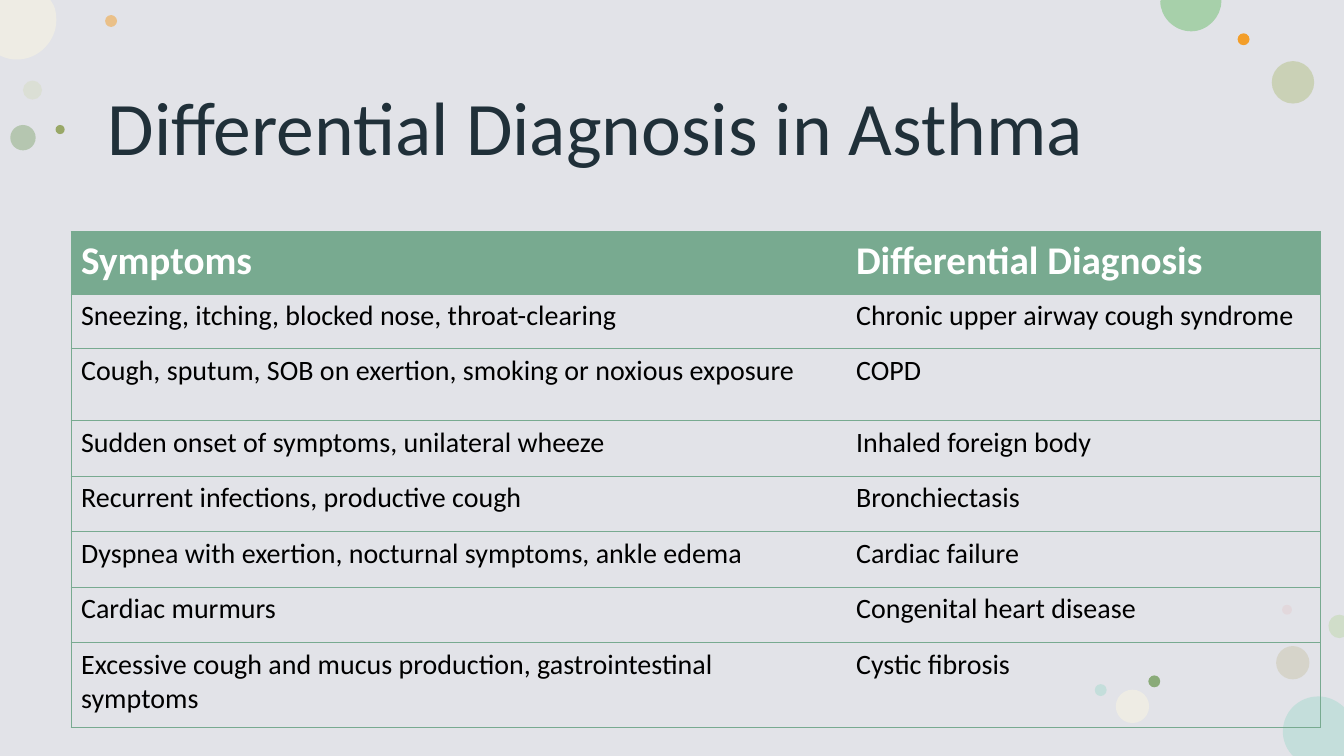
from lxml.etree import SubElement
from pptx import Presentation
from pptx.dml.color import RGBColor
from pptx.enum.shapes import MSO_SHAPE
from pptx.enum.text import MSO_ANCHOR
from pptx.oxml.ns import qn
from pptx.util import Cm, Pt

THEME = {
    "background": "E2E3E8",
    "border": "78AA90",
    "border_width": Pt(0.5),
    "title": {"size": Pt(54), "color": "203039", "bold": False},
    "header": {"size": Pt(28), "color": "FFFFFF", "bold": True},
    "body": {"size": Pt(20), "color": "000000", "bold": False},
    "font": "Calibri",
}
SLIDE_WIDTH, SLIDE_HEIGHT = Cm(33.87), Cm(19.05)

TITLE = "Differential Diagnosis in Asthma"
ROWS = [
    ("Symptoms", "Differential Diagnosis"),
    ("Sneezing, itching, blocked nose, throat-clearing", "Chronic upper airway cough syndrome"),
    ("Cough, sputum, SOB on exertion, smoking or noxious exposure", "COPD"),
    ("Sudden onset of symptoms, unilateral wheeze", "Inhaled foreign body"),
    ("Recurrent infections, productive cough", "Bronchiectasis"),
    ("Dyspnea with exertion, nocturnal symptoms, ankle edema", "Cardiac failure"),
    ("Cardiac murmurs", "Congenital heart disease"),
    ("Excessive cough and mucus production, gastrointestinal symptoms", "Cystic fibrosis"),
]
COLUMN_WIDTHS = [19.53, 11.96]
ROW_HEIGHTS = [1.57, 1.37, 1.82, 1.4, 1.4, 1.4, 1.4, 2.14]

DOTS = [
    (0.58, 2.03, 0.48, "D6DCC3", 50),
    (2.65, 0.38, 0.3, "F39E29", 50),
    (32.16, 16.28, 0.84, "CCC7AE", 50),
    (0.26, 3.15, 0.64, "8AAB79", 50),
    (32.05, 1.54, 1.07, "C2CBA4", 72),
    (31.19, 0.84, 0.3, "F39E29", 100),
    (32.31, 15.24, 0.25, "E3BEBE", 28),
    (28.94, 17.02, 0.3, "8AAB79", 100),
    (28.12, 17.38, 0.84, "EEECE4", 100),
    (27.59, 17.24, 0.3, "C4DEDB", 100),
    (1.4, 3.15, 0.23, "99A868", 100),
]
EDGE_DOTS = [
    ("C4DEDB", [
        (33.22, 17.55), (33.48, 17.55, 33.68, 17.65, 33.86, 17.81), (33.87, 17.83),
        (33.87, 19.05), (32.59, 19.05), (32.54, 19),
        (32.41, 18.85, 32.33, 18.64, 32.33, 18.44), (32.33, 17.93, 32.74, 17.55, 33.22, 17.55),
    ]),
    ("EEECE4", [
        (0, 0), (1.27, 0), (1.35, 0.13), (1.4, 0.23, 1.42, 0.36, 1.42, 0.51),
        (1.42, 1.04, 0.97, 1.5, 0.43, 1.5), (0.28, 1.5, 0.15, 1.47, 0.05, 1.42), (0, 1.4),
    ]),
    ("A7D0AA", [
        (29.26, 0), (30.78, 0), (30.78, 0.03),
        (30.78, 0.43, 30.43, 0.79, 30.02, 0.79), (29.59, 0.79, 29.24, 0.43, 29.24, 0.03),
    ]),
    ("D0DDC9", [
        (33.76, 15.49), (33.87, 15.52), (33.87, 16.05), (33.76, 16.08),
        (33.6, 16.08, 33.48, 15.95, 33.48, 15.77), (33.48, 15.62, 33.6, 15.49, 33.76, 15.49),
    ]),
]


def paint(shape, color, opacity=100):
    shape.shadow.inherit = False
    shape.line.fill.background()
    shape.fill.solid()
    shape.fill.fore_color.rgb = RGBColor.from_string(color)
    if opacity < 100:
        color_element = shape.fill._xPr.find(qn("a:solidFill"))[0]
        SubElement(color_element, qn("a:alpha"), val=str(opacity * 1000))


def write(text_frame, text, style):
    paragraph = text_frame.paragraphs[0]
    run = paragraph.add_run()
    run.text = text
    for name, value in {"name": THEME["font"], "size": style["size"], "bold": style["bold"]}.items():
        setattr(run.font, name, value)
    run.font.color.rgb = RGBColor.from_string(style["color"])
    return paragraph


def add_edge_dot(slide, color, segments):
    groups = [
        [(Cm(x), Cm(y)) for x, y in zip(segment[::2], segment[1::2])] for segment in segments
    ]
    start, *corners = [point for group in groups for point in group]
    builder = slide.shapes.build_freeform(*start)
    builder.add_line_segments(corners, close=True)
    shape = builder.convert_to_shape()
    lines = iter(list(shape._element.iter(qn("a:lnTo"))))
    for group in groups[1:]:
        first, *others = [next(lines) for point in group]
        if others:
            first.tag = qn("a:cubicBezTo")
            for line in others:
                first.append(line[0])
                line.getparent().remove(line)
    paint(shape, color)


def set_borders(cell, visible_sides):
    properties = cell._tc.get_or_add_tcPr()
    for side in "LRTB":
        line = SubElement(properties, qn(f"a:ln{side}"), w=str(THEME["border_width"]))
        if side in visible_sides:
            fill = SubElement(line, qn("a:solidFill"))
            SubElement(fill, qn("a:srgbClr"), val=THEME["border"])
        else:
            SubElement(line, qn("a:noFill"))


def add_diagnosis_table(slide):
    frame = slide.shapes.add_table(
        len(ROWS), len(COLUMN_WIDTHS), Cm(1.79), Cm(5.84),
        Cm(sum(COLUMN_WIDTHS)), Cm(sum(ROW_HEIGHTS)),
    )
    table = frame.table
    table.horz_banding = False
    for column, width in zip(table.columns, COLUMN_WIDTHS):
        column.width = Cm(width)
    for row_index, (texts, height) in enumerate(zip(ROWS, ROW_HEIGHTS)):
        table.rows[row_index].height = Cm(height)
        for column_index, text in enumerate(texts):
            cell = table.cell(row_index, column_index)
            set_borders(cell, "LTB" if column_index == 0 else "RTB")
            if row_index == 0:
                cell.fill.solid()
                cell.fill.fore_color.rgb = RGBColor.from_string(THEME["border"])
            else:
                cell.fill.background()
            write(cell.text_frame, text, THEME["body" if row_index else "header"])


def main():
    presentation = Presentation()
    presentation.slide_width, presentation.slide_height = SLIDE_WIDTH, SLIDE_HEIGHT
    slide = presentation.slides.add_slide(presentation.slide_layouts[6])
    backdrop = slide.shapes.add_shape(MSO_SHAPE.RECTANGLE, 0, 0, SLIDE_WIDTH, SLIDE_HEIGHT)
    paint(backdrop, THEME["background"])

    for left, top, diameter, color, opacity in DOTS:
        dot = slide.shapes.add_shape(MSO_SHAPE.OVAL, Cm(left), Cm(top), Cm(diameter), Cm(diameter))
        paint(dot, color, opacity)
    for color, segments in EDGE_DOTS:
        add_edge_dot(slide, color, segments)

    title_box = slide.shapes.add_textbox(Cm(2.47), Cm(2.16), Cm(29.62), Cm(3.68))
    title_box.text_frame.word_wrap = True
    title_box.text_frame.vertical_anchor = MSO_ANCHOR.TOP
    write(title_box.text_frame, TITLE, THEME["title"]).line_spacing = 0.9

    add_diagnosis_table(slide)
    presentation.save("out.pptx")


if __name__ == "__main__":
    main()
